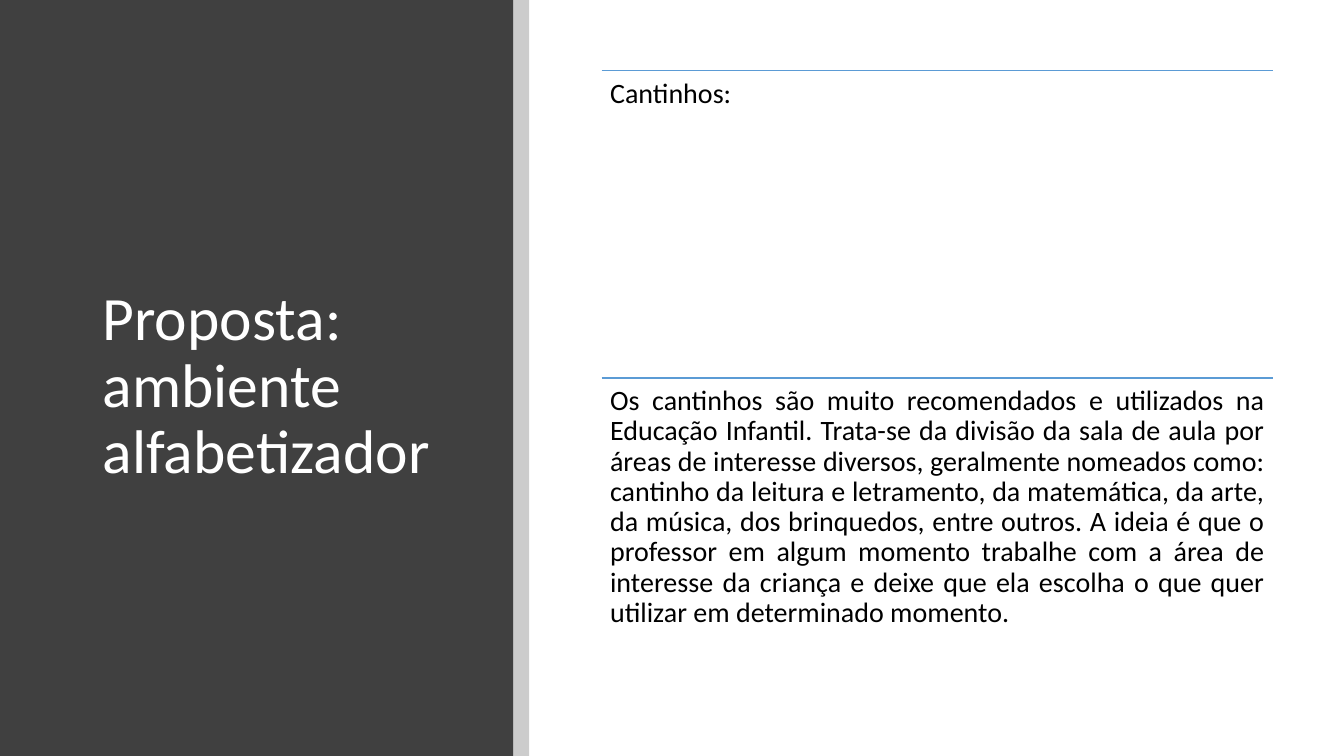
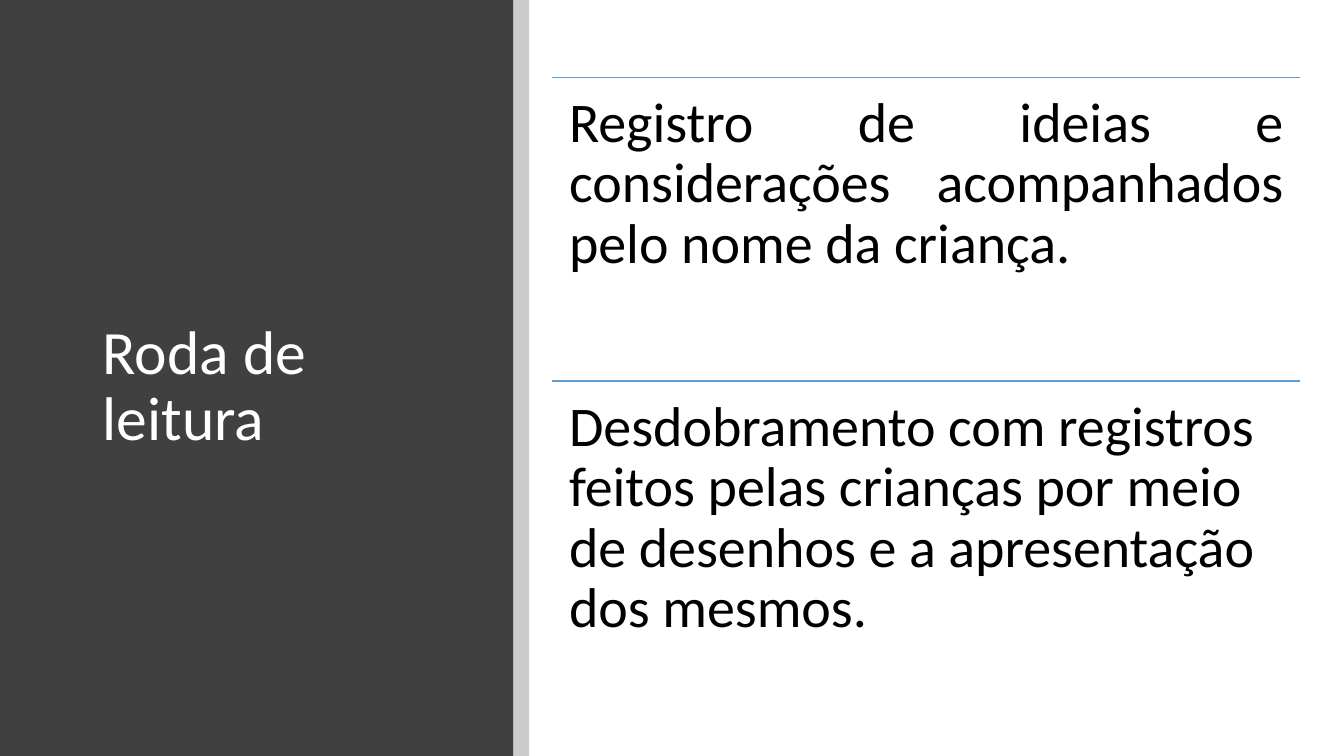
from dataclasses import dataclass

from lxml.etree import SubElement
from pptx import Presentation
from pptx.dml.color import RGBColor
from pptx.enum.shapes import MSO_CONNECTOR, MSO_SHAPE
from pptx.enum.text import MSO_ANCHOR, PP_ALIGN
from pptx.oxml.ns import qn
from pptx.slide import Slide
from pptx.util import Pt

COLORS = {
    "panel": "404040",
    "strip": "000000",
    "title": "FFFFFF",
    "body": "000000",
    "rule": "5B9BD5",
}
FONT = "Calibri"
WIDTH, HEIGHT = 960, 540
PANEL_WIDTH, STRIP_WIDTH = 366.5, 11.5
STRIP_OPACITY = 20
LINE_SPACING = 0.9


@dataclass(frozen=True)
class Box:
    left: float
    top: float
    width: float
    height: float


@dataclass(frozen=True)
class TextStyle:
    size: float
    color: str
    inset_x: float
    inset_y: float
    anchor: MSO_ANCHOR = MSO_ANCHOR.TOP


@dataclass(frozen=True)
class Section:
    text: str
    align: PP_ALIGN = PP_ALIGN.LEFT


@dataclass(frozen=True)
class Page:
    title: str
    first_box: Box
    style: TextStyle
    sections: tuple[Section, ...]


TITLE_BOX = Box(66.25, 64, 262.75, 425.5)
TITLE_STYLE = TextStyle(44, "title", 7.2, 3.6, MSO_ANCHOR.MIDDLE)

PAGES = (
    Page(
        "Proposta: ambiente alfabetizador",
        Box(429.8, 50.4, 479.5, 219.6),
        TextStyle(20, "body", 6, 6),
        (
            Section("Cantinhos:"),
            Section(
                "Os cantinhos são muito recomendados e utilizados na Educação Infantil. "
                "Trata-se da divisão da sala de aula por áreas de interesse diversos, "
                "geralmente nomeados como: cantinho da leitura e letramento, da matemática, "
                "da arte, da música, dos brinquedos, entre outros. A ideia é que o professor "
                "em algum momento trabalhe com a área de interesse da criança e deixe que ela "
                "escolha o que quer utilizar em determinado momento.",
                PP_ALIGN.JUSTIFY,
            ),
        ),
    ),
    Page(
        "Roda de leitura",
        Box(394.5, 55.2, 534.3, 217),
        TextStyle(40, "body", 12, 12),
        (
            Section(
                "Registro de ideias e considerações acompanhados pelo nome da criança.",
                PP_ALIGN.JUSTIFY,
            ),
            Section(
                "Desdobramento com registros feitos pelas crianças por meio de desenhos "
                "e a apresentação dos mesmos."
            ),
        ),
    ),
)


def rgb(name: str) -> RGBColor:
    return RGBColor.from_string(COLORS[name])


def add_band(s: Slide, box: Box, color: str, opacity: int = 100) -> None:
    sp = s.shapes.add_shape(
        MSO_SHAPE.RECTANGLE, Pt(box.left), Pt(box.top), Pt(box.width), Pt(box.height)
    )
    sp.shadow.inherit = False
    sp.line.fill.background()
    sp.fill.solid()
    sp.fill.fore_color.rgb = rgb(color)
    if opacity < 100:
        clr = sp.fill._xPr.find(qn("a:solidFill"))[0]
        SubElement(clr, qn("a:alpha")).set("val", str(opacity * 1000))


def add_text(s: Slide, box: Box, section: Section, style: TextStyle) -> None:
    sp = s.shapes.add_textbox(Pt(box.left), Pt(box.top), Pt(box.width), Pt(box.height))
    tf = sp.text_frame
    tf.word_wrap = True
    tf.vertical_anchor = style.anchor
    tf.margin_left = tf.margin_right = Pt(style.inset_x)
    tf.margin_top = tf.margin_bottom = Pt(style.inset_y)
    tf.text = section.text
    p = tf.paragraphs[0]
    p.alignment = section.align
    p.line_spacing = LINE_SPACING
    r = p.runs[0]
    r.font.name = FONT
    r.font.size = Pt(style.size)
    r.font.color.rgb = rgb(style.color)


def add_rule(s: Slide, box: Box) -> None:
    line = s.shapes.add_connector(
        MSO_CONNECTOR.STRAIGHT,
        Pt(box.left), Pt(box.top), Pt(box.left + box.width), Pt(box.top),
    )
    line.line.color.rgb = rgb("rule")
    line.line.width = Pt(1)
    SubElement(line._element.spPr, qn("a:effectLst"))


def add_page(prs: Presentation, page: Page) -> None:
    s = prs.slides.add_slide(prs.slide_layouts[6])
    add_band(s, Box(0, 0, PANEL_WIDTH, HEIGHT), "panel")
    add_band(s, Box(PANEL_WIDTH, 0, STRIP_WIDTH, HEIGHT), "strip", STRIP_OPACITY)
    add_text(s, TITLE_BOX, Section(page.title), TITLE_STYLE)
    first = page.first_box
    for i, section in enumerate(page.sections):
        box = Box(first.left, first.top + i * first.height, first.width, first.height)
        add_rule(s, box)
        add_text(s, box, section, page.style)


def main() -> None:
    prs = Presentation()
    prs.slide_width, prs.slide_height = Pt(WIDTH), Pt(HEIGHT)
    for page in PAGES:
        add_page(prs, page)
    prs.save("out.pptx")


if __name__ == "__main__":
    main()
